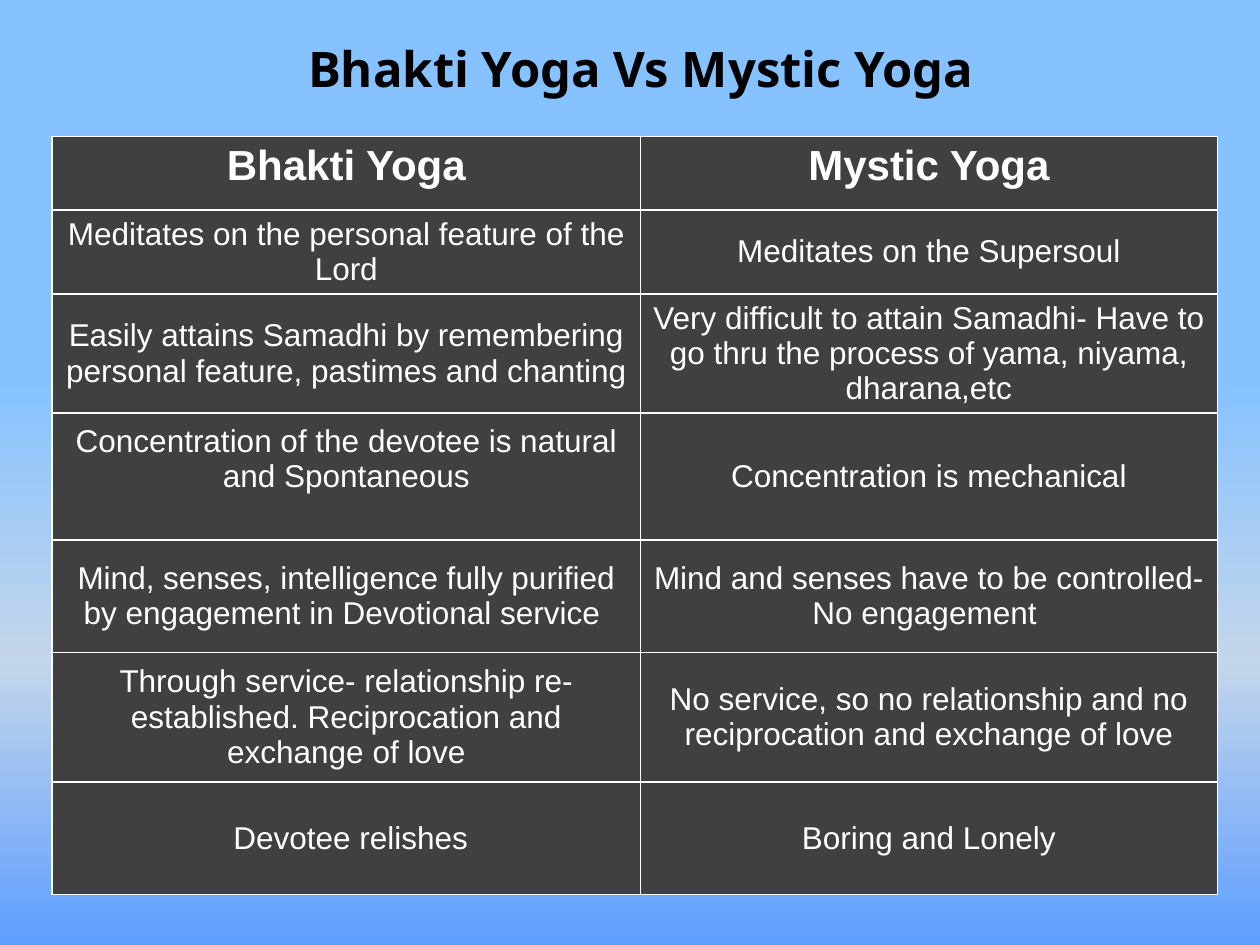
from copy import deepcopy

from lxml.etree import SubElement
from pptx import Presentation
from pptx.dml.color import RGBColor
from pptx.enum.text import MSO_ANCHOR, PP_ALIGN
from pptx.oxml.ns import qn
from pptx.util import Cm, Pt

TITLE = "Bhakti Yoga Vs Mystic Yoga"
HEADS = ("Bhakti Yoga", "Mystic Yoga")
PAIRS = [
    ("Meditates on the personal feature of the Lord",
     "Meditates on the Supersoul"),
    ("Easily attains Samadhi by remembering personal feature, pastimes and chanting ",
     "Very difficult to attain Samadhi- Have to go thru the process of yama, niyama, dharana,etc"),
    ("Concentration of the devotee is natural and Spontaneous",
     "Concentration is mechanical"),
    ("Mind, senses, intelligence fully purified by engagement in Devotional service ",
     "Mind and senses have to be controlled- No engagement "),
    ("Through service- relationship re-established. Reciprocation and exchange of love",
     "No service, so no relationship and no reciprocation and exchange of love"),
    (" Devotee relishes", "Boring and Lonely"),
]
WIDTHS = (11.86, 11.63)
HEIGHTS = (1.48, 1.7, 2.4, 2.56, 2.26, 2.62, 2.26)
RAISED = (3, 0)  # row and column of the cell whose text sits higher

BLACK = RGBColor(0, 0, 0)
WHITE = RGBColor(0xFF, 0xFF, 0xFF)
GREY = RGBColor(0x40, 0x40, 0x40)
SKY = [
    (0.4, RGBColor(0x85, 0xC2, 0xFF)),
    (0.7, RGBColor(0xC4, 0xD6, 0xEB)),
    (1.0, RGBColor(0x5E, 0x9E, 0xFF)),
]


def paint_sky(slide):
    fill = slide.background.fill
    fill.gradient()
    fill.gradient_angle = 270
    stops = slide.element.xpath(".//a:gsLst")[0]
    stops.append(deepcopy(stops[0]))
    for stop, (place, color) in zip(fill.gradient_stops, SKY):
        stop.position = place
        stop.color.rgb = color


def write(frame, text, size, font, color, bold):
    para = frame.paragraphs[0]
    para.alignment = PP_ALIGN.CENTER
    run = para.add_run()
    run.text = text
    run.font.size = Pt(size)
    run.font.name = font
    run.font.bold = bold
    run.font.color.rgb = color


def rule(cell):
    """Draw a thin white line on all four sides of the cell."""
    props = cell._tc.get_or_add_tcPr()
    for n, side in enumerate(("lnL", "lnR", "lnT", "lnB")):
        line = props.makeelement(qn(f"a:{side}"), {"w": str(Pt(1))})
        fill = SubElement(line, qn("a:solidFill"))
        SubElement(fill, qn("a:srgbClr"), val=str(WHITE))
        props.insert(n, line)


def add_grid(slide):
    rows = [HEADS] + PAIRS
    table = slide.shapes.add_table(
        len(rows), len(HEADS), Cm(1.05), Cm(2.75),
        Cm(sum(WIDTHS)), Cm(sum(HEIGHTS))).table
    for col, width in zip(table.columns, WIDTHS):
        col.width = Cm(width)
    for r, (texts, height) in enumerate(zip(rows, HEIGHTS)):
        table.rows[r].height = Cm(height)
        head = r == 0
        for c, text in enumerate(texts):
            cell = table.cell(r, c)
            cell.fill.solid()
            cell.fill.fore_color.rgb = GREY
            rule(cell)
            cell.vertical_anchor = MSO_ANCHOR.TOP if head else MSO_ANCHOR.MIDDLE
            if (r, c) == RAISED:
                cell.margin_bottom = Cm(0.85)
            write(cell.text_frame, text, 24 if head else 18, "Arial", WHITE, head)


def main():
    deck = Presentation()
    deck.slide_width, deck.slide_height = Cm(25.4), Cm(19.05)
    slide = deck.slides.add_slide(deck.slide_layouts[5])
    paint_sky(slide)
    title = slide.shapes.title
    title.left, title.top = Cm(1.27), Cm(0)
    title.width, title.height = Cm(23.29), Cm(2.75)
    title.text_frame.vertical_anchor = MSO_ANCHOR.MIDDLE
    write(title.text_frame, TITLE, 28, "Noto Sans", BLACK, True)
    add_grid(slide)
    deck.save("out.pptx")


if __name__ == "__main__":
    main()
